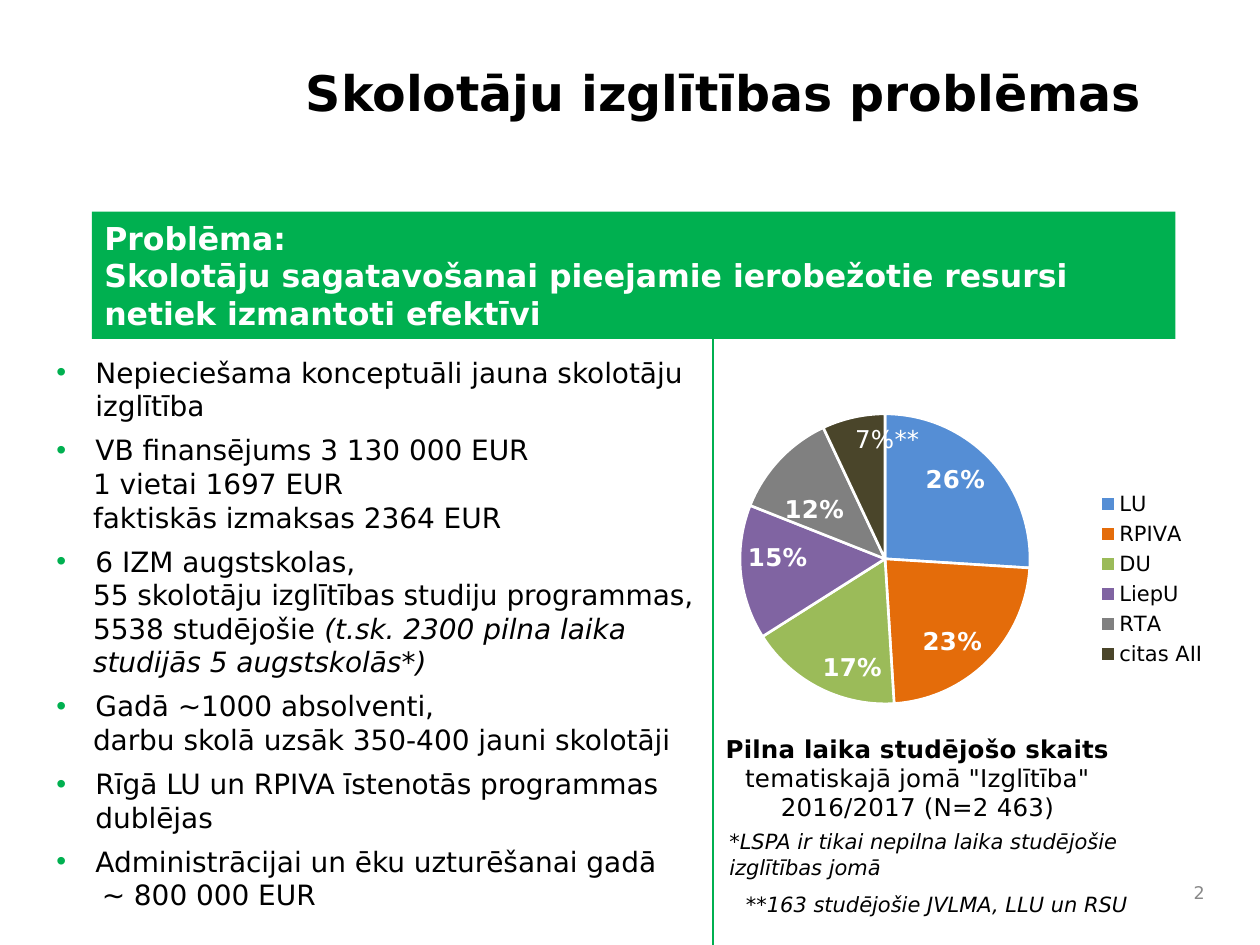
from dataclasses import dataclass

from lxml import etree
from pptx import Presentation, util as u
from pptx.chart import data
from pptx.dml import color
from pptx.enum import chart as ch, shapes, text
from pptx.oxml import ns, parse_xml


@dataclass
class Theme:
    font: str = "DejaVu Sans"
    ink: str = "000000"
    white: str = "FFFFFF"
    green: str = "00B050"
    grey: str = "898989"
    title: int = 28
    head: int = 18
    body: int = 16
    label: int = 14
    note: int = 12
    small: int = 10
    slices: tuple = ("558ED5", "E46C0A", "9BBB59", "8064A2", "808080", "4A452A")


def rgb(tone):
    return color.RGBColor.from_string(tone)


def layout(x, y, w=None, h=None, inner=False):
    tags = [("layoutTarget", "inner")] if inner else []
    if w:
        tags += [("xMode", "edge"), ("yMode", "edge")]
    tags += [("x", x), ("y", y)]
    if inner:
        tags += [("w", w), ("h", h)]
    body = "".join(f'<c:{tag} val="{val}"/>' for tag, val in tags)
    return parse_xml(f'<c:layout {ns.nsdecls("c")}><c:manualLayout>{body}'
                     '</c:manualLayout></c:layout>')


class Deck:
    """Draws styled elements on the current slide."""

    def __init__(self, theme):
        self.theme = theme
        self.prs = Presentation()
        self.prs.slide_width, self.prs.slide_height = u.Inches(10), u.Inches(7.5)
        self.slide = self.prs.slides.add_slide(self.prs.slide_layouts[6])

    def style(self, font, size, tone, bold=False, slant=False):
        font.name, font.size, font.color.rgb = self.theme.font, u.Pt(size), rgb(tone)
        font.bold, font.italic = bold, slant

    def run(self, para, words, size, tone=None, **look):
        run = para.add_run()
        run.text = words
        self.style(run.font, size, tone or self.theme.ink, **look)

    def frame(self, shape):
        frame = shape.text_frame
        frame.word_wrap = True
        return frame

    def box(self, *at):
        return self.frame(self.slide.shapes.add_textbox(*map(u.Inches, at)))

    def text(self, at, runs, size, tone=None, align=text.PP_ALIGN.LEFT,
             anchor=text.MSO_ANCHOR.TOP):
        frame = self.box(*at)
        frame.vertical_anchor = anchor
        para = frame.paragraphs[0]
        para.alignment = align
        for words, look in runs:
            self.run(para, words, size, tone, **look)

    def banner(self, at, lines):
        shape = self.slide.shapes.add_shape(
            shapes.MSO_SHAPE.RECTANGLE, *map(u.Inches, at))
        shape.shadow.inherit = False
        shape.fill.solid()
        shape.fill.fore_color.rgb = rgb(self.theme.green)
        shape.line.fill.background()
        frame = self.frame(shape)
        for num, words in enumerate(lines):
            para = frame.add_paragraph() if num else frame.paragraphs[0]
            para.alignment = text.PP_ALIGN.LEFT
            self.run(para, words, self.theme.head, self.theme.white, bold=True)

    def indent(self, para, left, first, dot):
        props = para._p.get_or_add_pPr()
        props.set("marL", str(u.Inches(left)))
        props.set("indent", str(u.Inches(first)))
        if dot:
            tint = etree.SubElement(props, ns.qn("a:buClr"))
            etree.SubElement(tint, ns.qn("a:srgbClr"), val=self.theme.green)
            etree.SubElement(props, ns.qn("a:buFont"), typeface="Arial")
            etree.SubElement(props, ns.qn("a:buChar"), char="•")
        else:
            etree.SubElement(props, ns.qn("a:buNone"))

    def bullets(self, at, groups):
        frame = self.box(*at)
        para = frame.paragraphs[0]
        for num, group in enumerate(groups):
            for row, (words, *rest) in enumerate(group):
                if num or row:
                    para = frame.add_paragraph()
                left, first = (rest[0] if rest else (0, 0.29)) if row else (0.31, -0.31)
                self.indent(para, left, first, not row)
                para.space_after = u.Pt(6 if row == len(group) - 1 else 0)
                self.run(para, words, self.theme.body)
                if len(rest) > 1:
                    self.run(para, rest[1], self.theme.body, slant=True)

    def line(self, start, end):
        line = self.slide.shapes.add_connector(
            shapes.MSO_CONNECTOR.STRAIGHT, *map(u.Inches, start + end))
        line.line.color.rgb = rgb(self.theme.green)
        line.line.width = u.Pt(0.75)
        etree.SubElement(line._element.spPr, ns.qn("a:effectLst"))

    def pie(self, at, cats, vals, title):
        theme = self.theme
        feed = data.CategoryChartData(number_format="0%")
        feed.categories = cats
        feed.add_series("Series 1", vals)
        chart = self.slide.shapes.add_chart(
            ch.XL_CHART_TYPE.PIE, *map(u.Inches, at), feed).chart
        self.style(chart.font, theme.small, theme.ink)
        chart.has_legend = True
        chart.legend.position = ch.XL_LEGEND_POSITION.RIGHT
        chart.legend.include_in_layout = False
        self.style(chart.legend.font, theme.note, theme.ink)

        chart.has_title = True
        frame = chart.chart_title.text_frame
        for num, words in enumerate(title):
            para = frame.add_paragraph() if num else frame.paragraphs[0]
            self.run(para, words, theme.label, bold=not num)
        head = chart.chart_title._element
        for old in head.findall(ns.qn("c:layout")):
            head.remove(old)
        head.find(ns.qn("c:tx")).addnext(layout(0.1, 0.8, True))
        area = chart._chartSpace.chart.plotArea
        for old in area.findall(ns.qn("c:layout")):
            area.remove(old)
        area.insert(0, layout(0.1, 0.17, 0.59, 0.58, True))

        plot = chart.plots[0]
        plot.vary_by_categories = True
        series = plot.series[0]
        for num, tone in enumerate(theme.slices):
            form = series.points[num].format
            form.fill.solid()
            form.fill.fore_color.rgb = rgb(tone)
            form.line.color.rgb = rgb(theme.white)
            form.line.width = u.Pt(1.5)
        tags = series.data_labels
        tags.show_value = True
        tags.number_format, tags.number_format_is_linked = "0%", False
        tags.position = ch.XL_LABEL_POSITION.INSIDE_END
        self.style(tags.font, theme.label, theme.white, bold=True)
        shift = series.points[4].data_label
        self.style(shift.font, theme.label, theme.white, bold=True)
        shift.position = ch.XL_LABEL_POSITION.INSIDE_END
        mark = tags._element.find(ns.qn("c:dLbl"))
        mark.find(ns.qn("c:idx")).addnext(layout(0, 0.06))
        last = series.points[5].data_label
        self.run(last.text_frame.paragraphs[0], "7%**", theme.label, theme.white)
        last.position = ch.XL_LABEL_POSITION.INSIDE_END


def main():
    theme = Theme()
    deck = Deck(theme)
    deck.bullets((0.35, 2.77, 5.34, 4.6), [
        [("Nepieciešama konceptuāli jauna skolotāju izglītība",)],
        [("VB finansējums 3 130 000 EUR",), ("1 vietai 1697 EUR",),
         ("faktiskās izmaksas 2364 EUR",)],
        [("6 IZM augstskolas,",), ("55 skolotāju izglītības studiju programmas,",),
         ("5538 studējošie ", (0.29, 0),
          "(t.sk. 2300 pilna laika studijās 5 augstskolās*)")],
        [("Gadā ~1000 absolventi,",), ("darbu skolā uzsāk 350-400 jauni skolotāji",)],
        [("Rīgā LU un RPIVA īstenotās programmas dublējas",)],
        [("Administrācijai un ēku uzturēšanai gadā",), ("~ 800 000 EUR", (0, 0.36))],
    ])
    right = text.PP_ALIGN.RIGHT
    deck.text((9.33, 6.92, 0.33, 0.33), [("2", {})], theme.small, theme.grey,
              right, text.MSO_ANCHOR.MIDDLE)
    deck.banner((0.73, 1.68, 8.6, 1.01), [
        "Problēma:",
        "Skolotāju sagatavošanai pieejamie ierobežotie resursi netiek izmantoti efektīvi"])
    deck.pie((5.29, 2.61, 4.39, 3.97),
             ["LU", "RPIVA", "DU", "LiepU", "RTA", "citas AII"],
             [0.26, 0.23, 0.17, 0.15, 0.12, 0.07],
             ["Pilna laika studējošo skaits", 'tematiskajā jomā "Izglītība"',
              "2016/2017 (N=2 463)"])
    slant = {"slant": True}
    deck.text((5.69, 6.53, 3.36, 0.5), [
        ("*", {}), ("LSPA ir tikai nepilna laika studējošie izglītības jomā", slant)],
        theme.note)
    deck.text((2.33, 0.45, 7, 1.13), [("Skolotāju izglītības problēmas", {"bold": True})],
              theme.title)
    deck.line((5.66, 2.69), (5.66, 7.5))
    deck.text((5.03, 7.03, 4.02, 0.3), [
        ("**", {}), ("163 studējošie JVLMA, LLU un RSU", slant)], theme.note, align=right)
    deck.prs.save("out.pptx")


if __name__ == "__main__":
    main()
